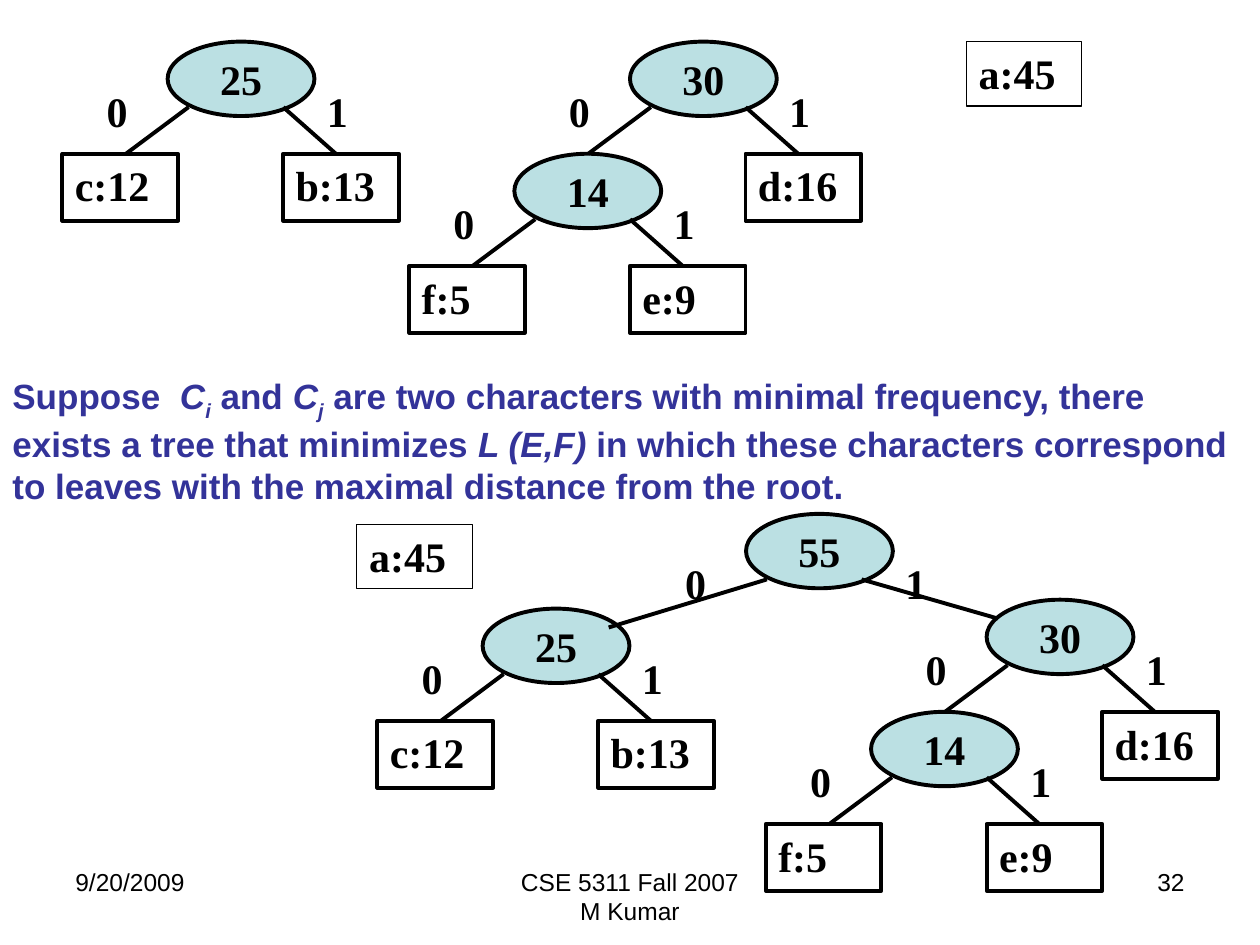
from lxml.etree import SubElement
from pptx import Presentation
from pptx.dml.color import RGBColor
from pptx.enum.shapes import MSO_CONNECTOR, MSO_SHAPE
from pptx.enum.text import MSO_ANCHOR as ANCHOR, PP_ALIGN as ALIGN
from pptx.oxml.ns import qn
from pptx.util import Cm, Pt

BLACK = RGBColor(0x00, 0x00, 0x00)
WHITE = RGBColor(0xFF, 0xFF, 0xFF)
AQUA = RGBColor(0xBB, 0xE0, 0xE3)
INDIGO = RGBColor(0x33, 0x33, 0x99)

NODE_W, NODE_H = 2.96, 1.5
LEAF_W, LEAF_H = 2.33, 1.35
BRANCH_STARTS = ((0.42, 1.32), (2.33, 1.32))
BRANCH_ENDS = ((-0.84, 2.26), (3.39, 2.26))
LEAF_OFFSETS = ((-2.12, 2.26), (2.33, 2.26))
BIT_OFFSETS = ((-1.48, 0.76), (2.96, 0.76))


def add_box(shapes, x, y, w, h, text, kind=MSO_SHAPE.RECTANGLE,
            line=BLACK, weight=2.25, fill=None):
    """Add an outlined shape with bold serif text."""
    sp = shapes.add_shape(kind, Cm(x), Cm(y), Cm(w), Cm(h))
    sp.shadow.inherit = False
    if fill is None:
        sp.fill.background()
    else:
        sp.fill.solid()
        sp.fill.fore_color.rgb = fill
    sp.line.color.rgb = line
    sp.line.width = Pt(weight)
    tf = sp.text_frame
    is_node = kind == MSO_SHAPE.OVAL
    tf.word_wrap = not is_node
    tf.vertical_anchor = ANCHOR.MIDDLE if is_node else ANCHOR.TOP
    p = tf.paragraphs[0]
    p.text = text
    p.alignment = ALIGN.CENTER if is_node else ALIGN.LEFT
    p.font.name, p.font.size, p.font.bold = "Times New Roman", Pt(24), True
    p.font.color.rgb = BLACK


def add_branch(shapes, x, y, start, end):
    """Add a branch line between two offsets from a node's corner."""
    cxn = shapes.add_connector(MSO_CONNECTOR.STRAIGHT,
                               Cm(x + start[0]), Cm(y + start[1]),
                               Cm(x + end[0]), Cm(y + end[1]))
    cxn.line.color.rgb = BLACK
    cxn.line.width = Pt(2.25)
    SubElement(cxn._element.spPr, qn("a:effectLst"))


def add_node(shapes, x, y, weight, leaves=(None, None), ends=BRANCH_ENDS):
    """Add a tree node with its bits, leaves and branches."""
    for bit, (dx, dy) in enumerate(BIT_OFFSETS):
        add_box(shapes, x + dx, y + dy, 1.06, 1.34, str(bit), line=WHITE)
    add_box(shapes, x, y, NODE_W, NODE_H, weight, MSO_SHAPE.OVAL, fill=AQUA)
    for leaf, (dx, dy) in zip(leaves, LEAF_OFFSETS):
        if leaf:
            add_box(shapes, x + dx, y + dy, LEAF_W, LEAF_H, leaf)
    for start, end in zip(BRANCH_STARTS, ends):
        add_branch(shapes, x, y, start, end)


def add_tree_25(shapes, x, y):
    """Add the tree of weight 25."""
    add_node(shapes, x, y, "25", ("c:12", "b:13"))


def add_tree_30(shapes, x, y):
    """Add the tree of weight 30 with its subtree of weight 14."""
    add_node(shapes, x - 2.33, y + 2.26, "14", ("f:5", "e:9"))
    add_node(shapes, x, y, "30", (None, "d:16"))


def add_tree_55(shapes, x, y):
    """Add the merged tree of weight 55."""
    add_tree_25(shapes, x - 5.31, y + 1.91)
    add_tree_30(shapes, x + 4.85, y + 1.73)
    add_node(shapes, x, y, "55", ends=((-2.77, 2.29), (5.08, 2.11)))


def add_single(shapes, x, y):
    """Add the leaf that is not merged yet."""
    add_box(shapes, x, y, LEAF_W, 1.3, "a:45", weight=0.75)


def add_text(shapes, x, y, w, h):
    """Add an empty wrapping text box and return its text frame."""
    tf = shapes.add_textbox(Cm(x), Cm(y), Cm(w), Cm(h)).text_frame
    tf.word_wrap = True
    return tf


def add_statement(shapes, x, y, w, h):
    """Add the statement on characters with minimal frequency."""
    p = add_text(shapes, x, y, w, h).paragraphs[0]
    p.font.name, p.font.size, p.font.bold = "Arial", Pt(20), True
    p.font.color.rgb = INDIGO
    parts = (
        ("Suppose  ", ""), ("C", "italic"), ("i", "sub"), (" and ", ""),
        ("C", "italic"), ("j", "sub"),
        (" are two characters with minimal frequency, there exists a tree"
         " that minimizes ", ""),
        ("L (E,F)", "italic"),
        (" in which these characters correspond to leaves with the maximal"
         " distance from the root.", ""),
    )
    for text, style in parts:
        r = p.add_run()
        r.text = text
        r.font.italic = bool(style)
        if style == "sub":
            r.font._element.set("baseline", "-25000")


def add_footer(shapes, x, y, w, h):
    """Add the date, course and slide number along the bottom."""
    side = 5.93
    columns = (
        (x, side, ALIGN.LEFT, ("9/20/2009",)),
        (x + (w - 8.04) / 2, 8.04, ALIGN.CENTER,
         ("CSE 5311 Fall 2007", "M Kumar")),
        (x + w - side, side, ALIGN.RIGHT, ("32",)),
    )
    for left, width, align, lines in columns:
        tf = add_text(shapes, left, y, width, h)
        for i, text in enumerate(lines):
            p = tf.add_paragraph() if i else tf.paragraphs[0]
            p.text = text
            p.alignment = align
            p.font.name, p.font.size = "Arial", Pt(14)
            p.font.color.rgb = BLACK


def main():
    """Build the slide and save it."""
    prs = Presentation()
    prs.slide_width, prs.slide_height = Cm(25.4), Cm(19.05)
    shapes = prs.slides.add_slide(prs.slide_layouts[6]).shapes
    add_footer(shapes, 1.27, 17.35, 22.86, 1.32)
    add_tree_25(shapes, 3.38, 0.84)
    add_tree_30(shapes.add_group_shape().shapes, 12.7, 0.84)
    add_single(shapes, 19.48, 0.84)
    merged = shapes.add_group_shape().shapes
    add_single(merged, 7.19, 10.57)
    add_tree_55(merged, 15.04, 10.36)
    add_statement(shapes, 0, 7.42, 25.4, 2.79)
    prs.save("out.pptx")


if __name__ == "__main__":
    main()
